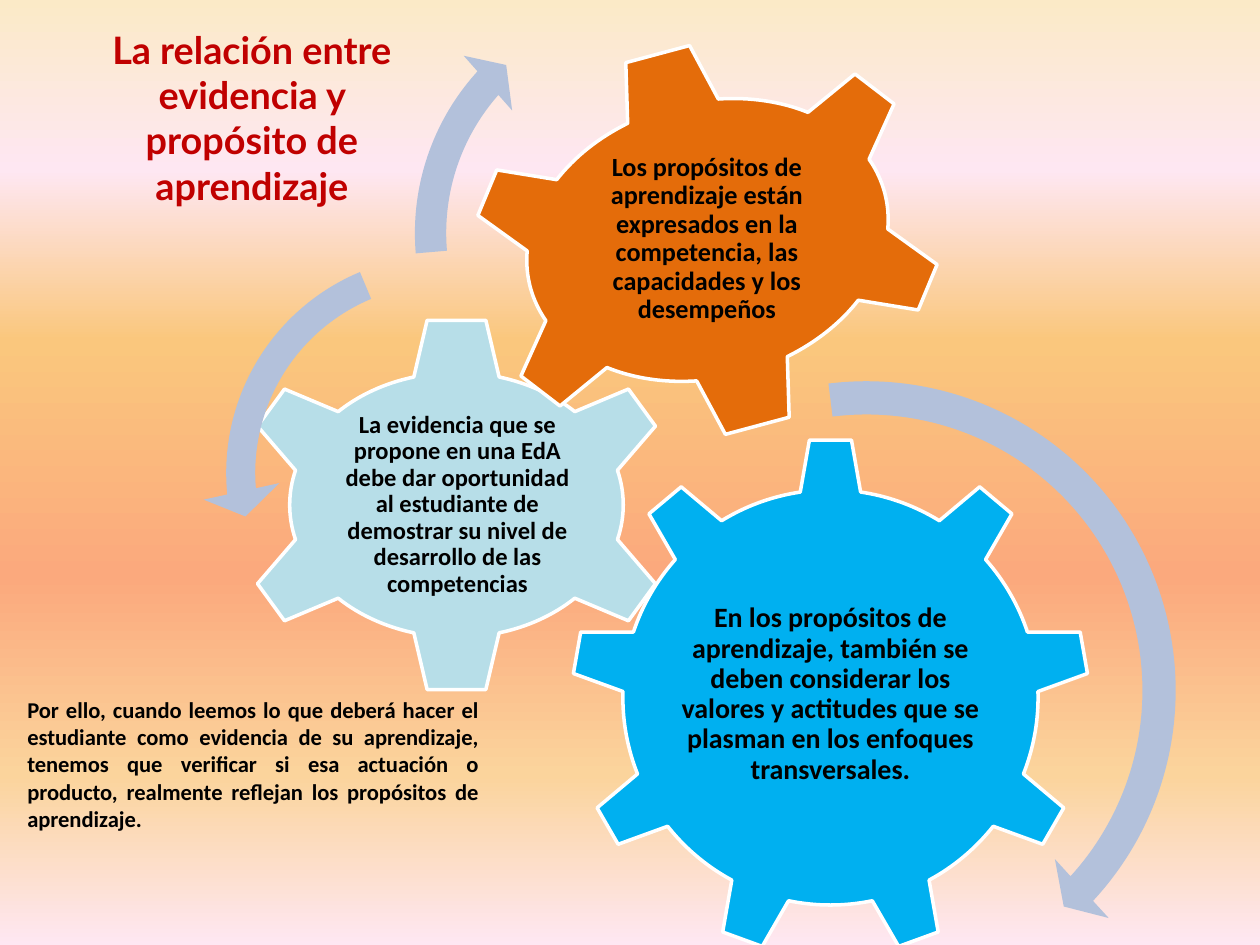
from pptx import Presentation
from pptx.dml.color import RGBColor
from pptx.enum.shapes import MSO_SHAPE
from pptx.enum.text import MSO_ANCHOR, PP_ALIGN
from pptx.oxml.ns import qn
from pptx.util import Pt
from lxml.etree import SubElement

PX = 914400 / 126

THEME = {
    "background": [(0, "FBEAC7"), (18, "FEE7F2"), (36, "FAC77D"),
                   (61, "FBA97D"), (82, "FBD49C"), (100, "FEE7F2")],
    "blue": "00B0F0", "pale": "B7DEE8", "orange": "E46C0A",
    "outline": "FFFFFF", "arrow": "B3C1DB", "title": "C00000", "ink": "000000",
    "title_size": 21.6, "body_size": 12.9,
    "blue_size": 16, "pale_size": 14, "orange_size": 15,
}


def add_figure(page, kind, area, color):
    figure = page.shapes.add_shape(kind, *[round(n * PX) for n in area])
    figure.shadow.inherit = False
    figure.fill.solid()
    figure.fill.fore_color.rgb = RGBColor.from_string(THEME[color])
    figure.line.fill.background()
    return figure


def add_text(page, area, words, size, color="ink", font="Calibri", frame=None, para_format=None):
    box = page.shapes.add_textbox(*[round(n * PX) for n in area])
    para = box.text_frame.paragraphs[0]
    span = para.add_run()
    span.text = words
    formats = [
        (box.text_frame, {"word_wrap": True, "vertical_anchor": MSO_ANCHOR.MIDDLE, **(frame or {})}),
        (para, {"alignment": PP_ALIGN.CENTER, **(para_format or {})}),
        (span.font, {"name": font, "size": Pt(THEME[size]), "bold": True}),
    ]
    for target, values in formats:
        for name, value in values.items():
            setattr(target, name, value)
    span.font.color.rgb = RGBColor.from_string(THEME[color])


deck = Presentation()
deck.slide_width = round(1260 * PX)
deck.slide_height = round(945 * PX)
page = deck.slides.add_slide(deck.slide_layouts[6])

# Background gradient, top to bottom
background = page.background.fill
background.gradient()
background.gradient_angle = 270
stops = page._element.find(".//" + qn("a:gsLst"))
for stop in list(stops):
    stops.remove(stop)
for percent, color in THEME["background"]:
    stop = SubElement(stops, qn("a:gs"), pos=str(percent * 1000))
    SubElement(stop, qn("a:srgbClr"), val=color)

# Gears with their texts
gears = [
    (MSO_SHAPE.GEAR_9, (571, 438, 519, 519), 0, "blue", (675, 561, 311, 267),
     "En los propósitos de aprendizaje, también se deben considerar los valores "
     "y actitudes que se plasman en los enfoques transversales."),
    (MSO_SHAPE.GEAR_6, (233, 316, 447, 378), 0, "pale", (339, 412, 237, 186),
     "La evidencia que se propone en una EdA debe dar oportunidad al estudiante "
     "de demostrar su nivel de desarrollo de las competencias"),
    (MSO_SHAPE.GEAR_6, (465, 43, 485, 394), 345, "orange", (576, 123, 262, 232),
     "Los propósitos de aprendizaje están expresados en la competencia, "
     "las capacidades y los desempeños"),
]
margins = {f"margin_{side}": Pt(1.6) for side in ("left", "top", "right", "bottom")}
for kind, area, rotation, color, text_area, words in gears:
    gear = add_figure(page, kind, area, color)
    gear.rotation = rotation
    gear.line.color.rgb = RGBColor.from_string(THEME["outline"])
    gear.line.width = Pt(2)
    add_text(page, text_area, words, f"{color}_size", frame=margins,
             para_format={"line_spacing": 0.9})

# Turning arrows: thickness, head angle, end angle, start angle, head width
arrows = [
    (MSO_SHAPE.CIRCULAR_ARROW, (534, 358, 665, 665), (0.05, 2.99, 25.57, 157.77, 0.06)),
    (MSO_SHAPE.LEFT_CIRCULAR_ARROW, (202, 231, 484, 484), (0.06, 4.3, 104.89, 148.38, 0.08)),
    (MSO_SHAPE.CIRCULAR_ARROW, (394, -28, 522, 522), (0.06, 3.94, 133.14, 105.08, 0.07)),
]
for kind, area, bends in arrows:
    arrow = add_figure(page, kind, area, "arrow")
    for index, bend in enumerate(bends):
        arrow.adjustments[index] = bend

# Title and closing remark
add_text(page, (63, 38, 378, 158), "La relación entre evidencia y propósito de aprendizaje",
         "title_size", "title", "Lato")
add_text(page, (15, 690, 476, 139),
         "Por ello, cuando leemos lo que deberá hacer el estudiante como evidencia de su "
         "aprendizaje, tenemos que verificar si esa actuación o producto, realmente "
         "reflejan los propósitos de aprendizaje.",
         "body_size", frame={"vertical_anchor": MSO_ANCHOR.TOP},
         para_format={"alignment": PP_ALIGN.JUSTIFY})

deck.save("out.pptx")
